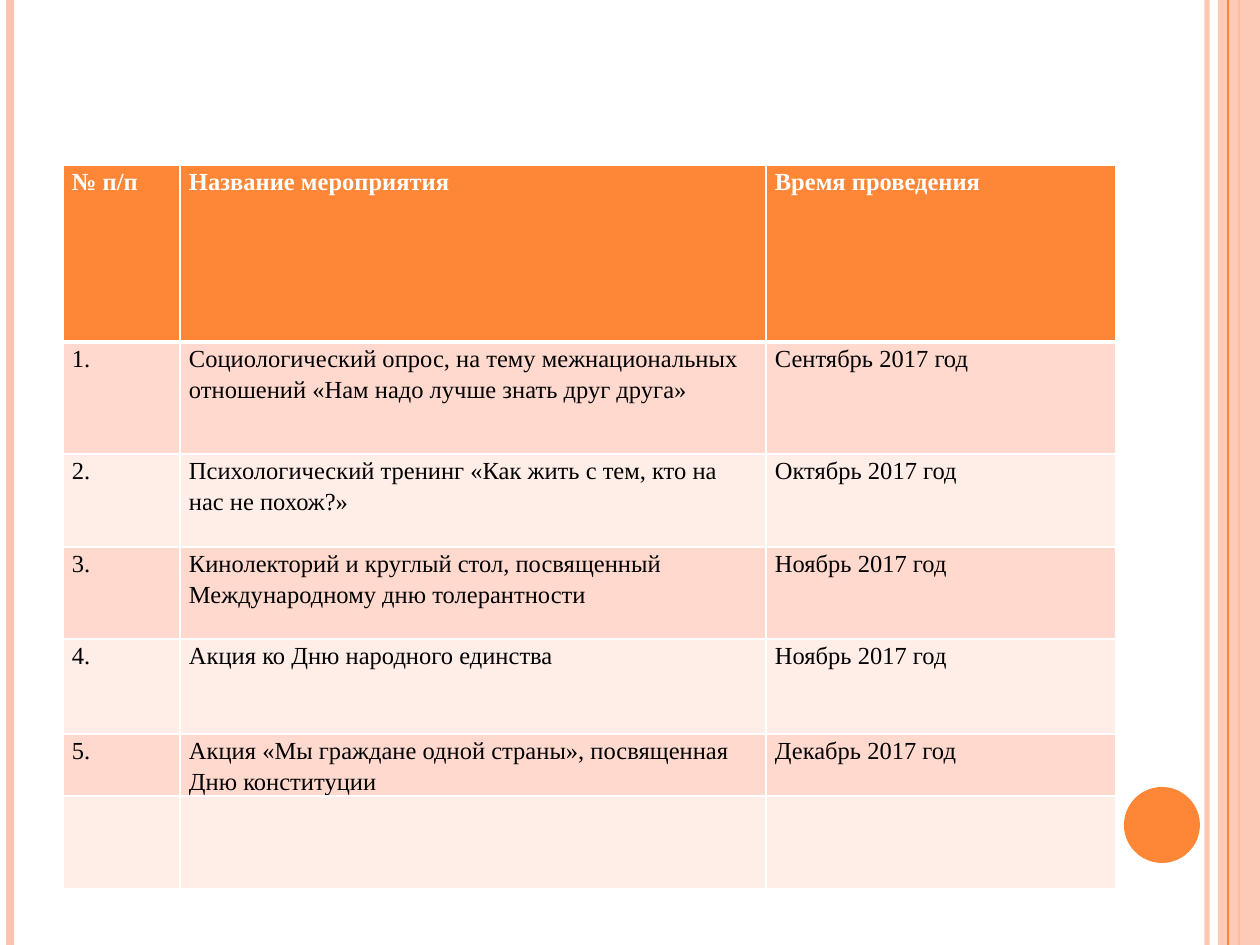
from lxml import etree
from pptx import Presentation
from pptx.dml.color import RGBColor
from pptx.enum.shapes import MSO_CONNECTOR, MSO_SHAPE
from pptx.enum.text import MSO_ANCHOR
from pptx.oxml.ns import qn
from pptx.util import Emu, Pt

STRAIGHT = MSO_CONNECTOR.STRAIGHT
RECTANGLE, OVAL = MSO_SHAPE.RECTANGLE, MSO_SHAPE.OVAL
TOP = MSO_ANCHOR.TOP

HEADER = ("№ п/п", "Название мероприятия", "Время проведения")
EVENTS = [
    ("Социологический опрос, на тему межнациональных отношений «Нам надо лучше знать друг друга»",
     "Сентябрь 2017 год"),
    ("Психологический тренинг «Как жить с тем, кто на нас не похож?»", "Октябрь 2017 год"),
    ("Кинолекторий и круглый стол, посвященный Международному дню толерантности",
     "Ноябрь 2017 год"),
    ("Акция ко Дню народного единства", "Ноябрь 2017 год"),
    ("Акция «Мы граждане одной страны», посвященная Дню конституции", "Декабрь 2017 год"),
]
COLORS = {
    "orange": "FE8637", "peach": "FEC3AE", "odd": "FFD9CE", "even": "FFEDE8",
    "white": "FFFFFF", "black": "000000",
}
FONT = "Times New Roman"
SCALE = 914400 // 126
WIDTH, HEIGHT = 1260, 945
COLUMN_WIDTHS = (117, 586, 350)
ROW_HEIGHTS = (177, 112, 93, 92, 95, 62, 93)
TABLE_LEFT, TABLE_TOP = 63, 165
BACK_STRIPES = [(1207, "peach", 3, 93), (10, "peach", 4.5, 100), (1239, "orange", 1.5, 100)]
EDGE_STRIPE = (1228, "orange", 0.75, 100)


def px(value):
    return Emu(value * SCALE)


def rgb(name):
    return RGBColor.from_string(COLORS[name])


def set_alpha(element, percent):
    if percent < 100:
        color = element.find(".//" + qn("a:srgbClr"))
        etree.SubElement(color, qn("a:alpha"), val=str(percent * 1000))


def add_stripe(page, x, color, weight, alpha):
    line = page.shapes.add_connector(STRAIGHT, px(x), 0, px(x), px(HEIGHT))
    line.line.color.rgb = rgb(color)
    line.line.width = Pt(weight)
    properties = line._element.spPr
    set_alpha(properties, alpha)
    etree.SubElement(properties, qn("a:effectLst"))


def add_solid(page, kind, bounds, color, alpha=100):
    shape = page.shapes.add_shape(kind, *map(px, bounds))
    shape.shadow.inherit = False
    shape.fill.solid()
    shape.fill.fore_color.rgb = rgb(color)
    shape.line.fill.background()
    set_alpha(shape._element.spPr, alpha)


def set_borders(cell, bottom_weight):
    properties = cell._tc.get_or_add_tcPr()
    weights = (("a:lnL", 1), ("a:lnR", 1), ("a:lnT", 1), ("a:lnB", bottom_weight))
    for index, (tag, weight) in enumerate(weights):
        border = etree.Element(qn(tag), w=str(Pt(weight)))
        fill = etree.SubElement(border, qn("a:solidFill"))
        etree.SubElement(fill, qn("a:srgbClr"), val=COLORS["white"])
        properties.insert(index, border)


def fill_cell(cell, text, fill, ink, is_header):
    cell.fill.solid()
    cell.fill.fore_color.rgb = rgb(fill)
    cell.margin_left = cell.margin_right = px(9)
    cell.margin_top = cell.margin_bottom = 0
    cell.vertical_anchor = TOP
    cell.text = text
    para = cell.text_frame.paragraphs[0]
    para.line_spacing = 1.15
    para.font.name = FONT
    para.font.size = Pt(14)
    para.font.bold = is_header
    para.font.color.rgb = rgb(ink)
    set_borders(cell, 3 if is_header else 1)


def add_plan(page):
    rows = [HEADER]
    rows += [(f"{number}.", *event) for number, event in enumerate(EVENTS, 1)]
    rows.append(("", "", ""))
    frame = page.shapes.add_table(
        len(rows), len(HEADER), px(TABLE_LEFT), px(TABLE_TOP),
        px(sum(COLUMN_WIDTHS)), px(sum(ROW_HEIGHTS)))
    table = frame.table
    for column, width in zip(table.columns, COLUMN_WIDTHS):
        column.width = px(width)
    for index, (row, height, texts) in enumerate(zip(table.rows, ROW_HEIGHTS, rows)):
        row.height = px(height)
        is_header = index == 0
        fill = "orange" if is_header else ("odd" if index % 2 else "even")
        ink = "white" if is_header else "black"
        for cell, text in zip(row.cells, texts):
            fill_cell(cell, text, fill, ink, is_header)


def main():
    deck = Presentation()
    deck.slide_width, deck.slide_height = px(WIDTH), px(HEIGHT)
    page = deck.slides.add_slide(deck.slide_layouts[6])
    for stripe in BACK_STRIPES:
        add_stripe(page, *stripe)
    add_solid(page, RECTANGLE, (1218, 0, 42, HEIGHT), "peach", 87)
    add_stripe(page, *EDGE_STRIPE)
    add_solid(page, OVAL, (1124, 787, 76, 76), "orange")
    add_plan(page)
    deck.save("out.pptx")


if __name__ == "__main__":
    main()
